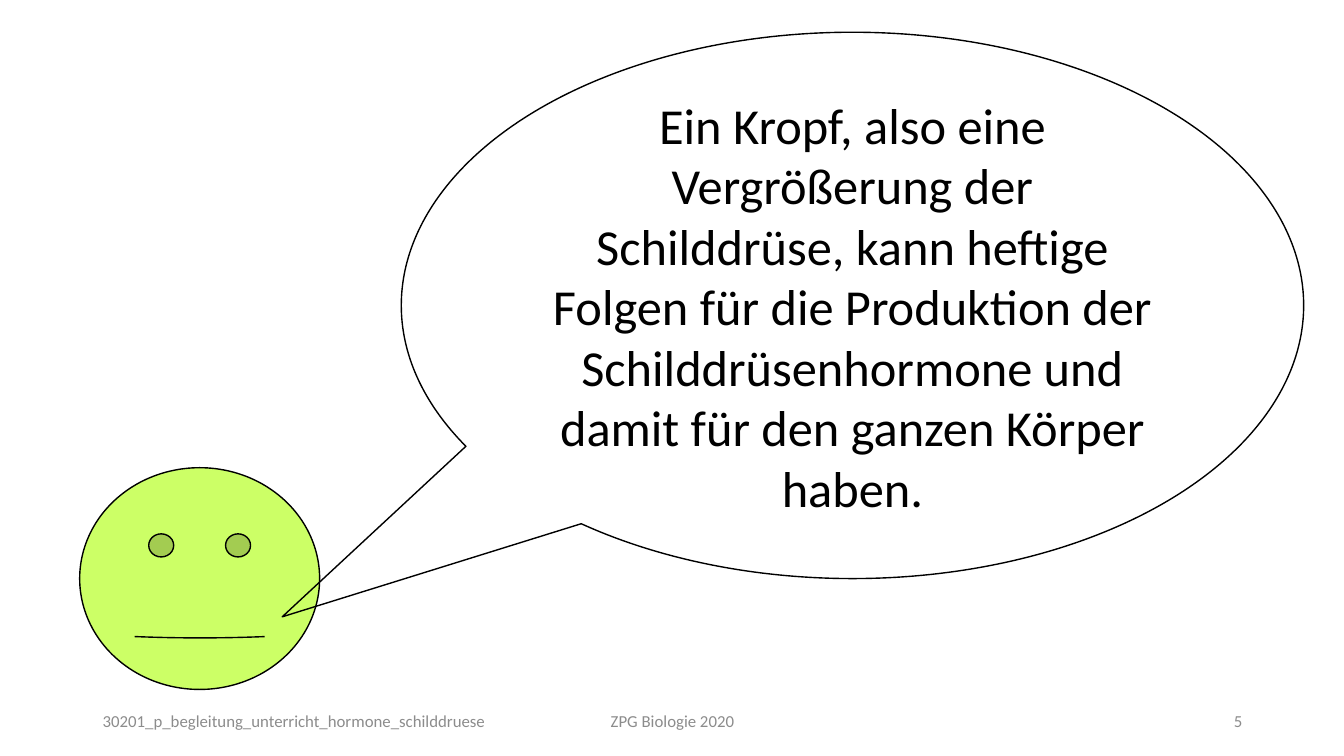
from pptx import Presentation
from pptx.dml.color import RGBColor
from pptx.enum.shapes import MSO_SHAPE
from pptx.enum.text import MSO_ANCHOR, PP_ALIGN
from pptx.util import Inches, Pt

FACE = MSO_SHAPE.SMILEY_FACE
CALLOUT = MSO_SHAPE.OVAL_CALLOUT
MIDDLE = MSO_ANCHOR.MIDDLE
LEFT, CENTER, RIGHT = PP_ALIGN.LEFT, PP_ALIGN.CENTER, PP_ALIGN.RIGHT

BLACK = RGBColor(0x00, 0x00, 0x00)
GREY = RGBColor(0x8C, 0x8C, 0x8C)
LIME = RGBColor(0xCC, 0xFF, 0x66)
FONT = "Calibri"
WIDTH, HEIGHT = 13.33, 7.5

STATEMENT = (
    "Ein Kropf, also eine Vergrößerung der Schilddrüse, kann heftige Folgen "
    "für die Produktion der Schilddrüsenhormone und damit für den ganzen "
    "Körper haben."
)
FOOTER = [
    ("30201_p_begleitung_unterricht_hormone_schilddruese", 0, 4.28, LEFT),
    ("ZPG Biologie 2020", 3.5, 4.5, CENTER),
    ("5", 8.5, 3, RIGHT),
]


def write(shape, text, size, color, align):
    """Set one wrapped, vertically centred paragraph in a shape."""
    frame = shape.text_frame
    frame.word_wrap = True
    frame.vertical_anchor = MIDDLE
    para = frame.paragraphs[0]
    para.text = text
    para.alignment = align
    para.font.name = FONT
    para.font.size = Pt(size)
    para.font.color.rgb = color


def add_outlined(page, kind, box, adjustments):
    """Add an unfilled preset shape with a thin black outline."""
    shape = page.shapes.add_shape(kind, *map(Inches, box))
    for index, value in enumerate(adjustments):
        shape.adjustments[index] = value
    shape.shadow.inherit = False
    shape.fill.background()
    shape.line.color.rgb = BLACK
    shape.line.width = Pt(1)
    return shape


def add_speaker(page, box):
    """Place the green face with its nearly straight mouth."""
    face = add_outlined(page, FACE, box, [0.003])
    face.fill.solid()
    face.fill.fore_color.rgb = LIME


def add_speech(page, box):
    """Place the speech bubble pointing down to the speaker."""
    bubble = add_outlined(page, CALLOUT, box, [-0.632, 0.57])
    write(bubble, STATEMENT, 36, BLACK, CENTER)


def add_footer(page, box):
    """Place the file name, the group and the page number in a row."""
    left, top, _, height = box
    for text, offset, width, align in FOOTER:
        field = page.shapes.add_textbox(
            *map(Inches, (left + offset, top, width, height))
        )
        write(field, text, 12, GREY, align)


def main():
    """Build the slide and save the deck."""
    deck = Presentation()
    deck.slide_width, deck.slide_height = Inches(WIDTH), Inches(HEIGHT)
    page = deck.slides.add_slide(deck.slide_layouts[6])
    add_speaker(page, (0.79, 4.64, 2.38, 2.2))
    add_speech(page, (3.98, 0.32, 8.95, 5.42))
    add_footer(page, (0.92, 6.95, 11.5, 0.4))
    deck.save("out.pptx")


if __name__ == "__main__":
    main()
